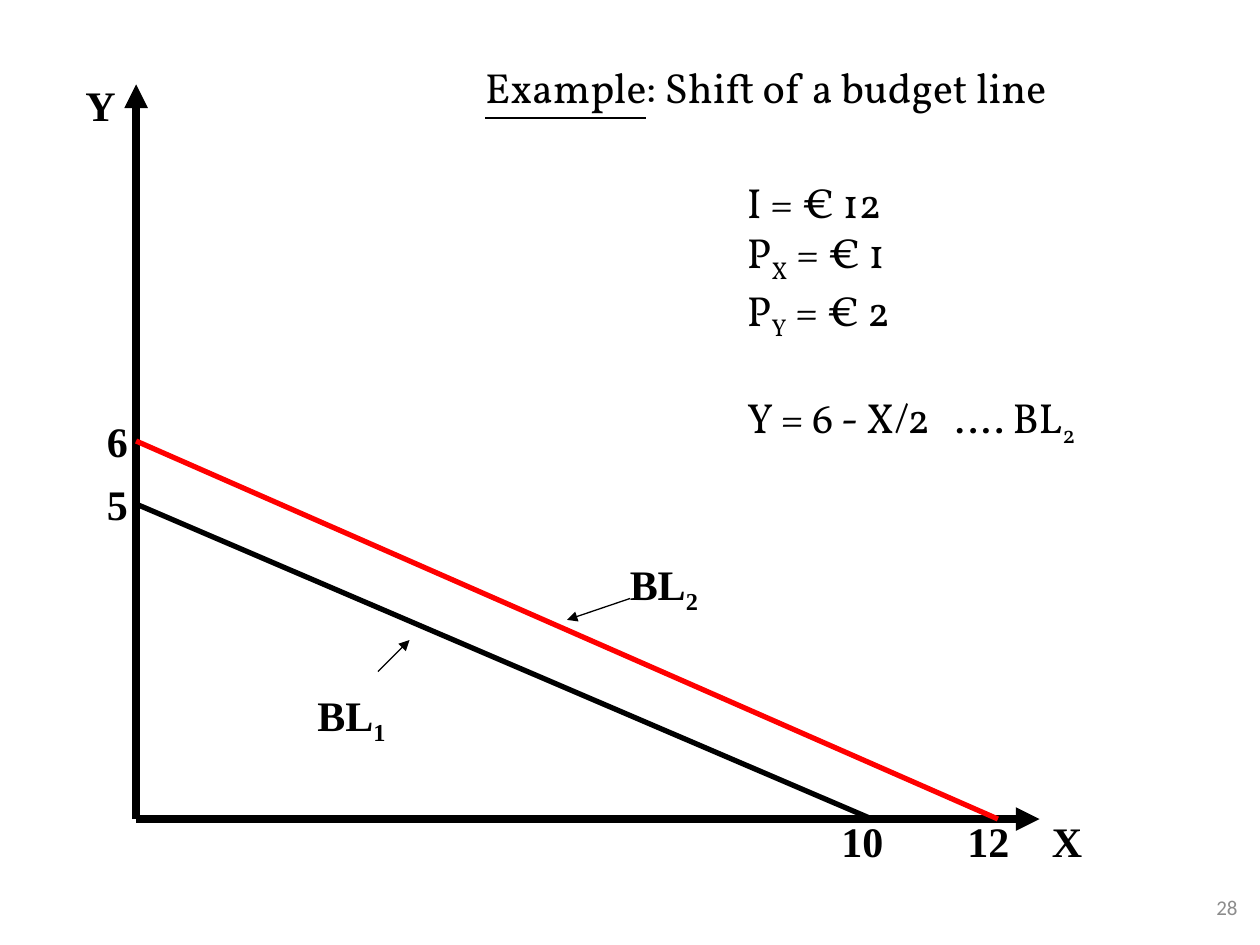
from lxml.etree import SubElement
from pptx import Presentation
from pptx.dml.color import RGBColor
from pptx.enum.shapes import MSO_CONNECTOR
from pptx.enum.text import MSO_ANCHOR, PP_ALIGN
from pptx.oxml.ns import qn
from pptx.util import Inches, Pt

BLACK = RGBColor(0, 0, 0)
RED = RGBColor(255, 0, 0)
GRAY = RGBColor(0x8C, 0x8C, 0x8C)
SERIF, BODY, SANS = "Times New Roman", "Vollkorn", "Calibri"

ORIGIN_X, ORIGIN_Y = 1.08, 6.5
ORIGIN = (ORIGIN_X, ORIGIN_Y)

TITLE = [("Example", "underline"), (": Shift of a budget line", "")]
EQUATIONS = [
    [("I = € 12", "")],
    [("P", ""), ("X", "sub"), (" = € 1", "")],
    [("P", ""), ("Y", "sub"), (" = € 2", "")],
    [("Y = 6 - X/2\t…. BL", ""), ("2", "sub")],
]
LINES = [
    (ORIGIN, (8.25, ORIGIN_Y), BLACK, 4.5, True),
    (ORIGIN, (ORIGIN_X, 0.67), BLACK, 4.5, True),
    ((ORIGIN_X, 4), (6.92, ORIGIN_Y), BLACK, 3, False),
    ((ORIGIN_X, 3.5), (7.92, ORIGIN_Y), RED, 3, False),
    ((3, 5.33), (3.25, 5.08), BLACK, 0.75, True),
    ((5, 4.75), (4.5, 4.92), BLACK, 0.75, True),
]
LABELS = [
    ([("Y", "")], 0.58, 0.58, 0.44),
    ([("X", "")], 8.25, 6.42, 0.44),
    ([("10", "")], 6.58, 6.42, 0.53),
    ([("12", "")], 7.58, 6.42, 0.53),
    ([("5", "")], 0.75, 3.75, 0.37),
    ([("6", "")], 0.75, 3.25, 0.37),
    ([("BL", ""), ("1", "sub")], 2.42, 5.42, 0.76),
    ([("BL", ""), ("2", "sub")], 4.9, 4.38, 0.76),
]


def add_line(slide, start, end, color, width, arrow):
    points = [Inches(v) for v in (*start, *end)]
    sp = slide.shapes.add_connector(MSO_CONNECTOR.STRAIGHT, *points)
    sp.line.color.rgb = color
    sp.line.width = Pt(width)
    if arrow:
        SubElement(sp.line._get_or_add_ln(), qn("a:tailEnd"), type="triangle")
    SubElement(sp._element.spPr, qn("a:effectLst"))


def place(sp, left, top, width, height):
    sp.left, sp.top = Inches(left), Inches(top)
    sp.width, sp.height = Inches(width), Inches(height)


def fill_paragraph(p, runs, font, size=24, color=BLACK, bold=False):
    p.font.name = font
    p.font.size = Pt(size)
    p.font.color.rgb = color
    p.font.bold = bold
    for text, style in runs:
        r = p.add_run()
        r.text = text
        if style == "sub":
            r._r.get_or_add_rPr().set("baseline", "-25000")
        elif style == "underline":
            r.font.underline = True


def add_text(slide, paragraphs, box, font, wrap=False, **style):
    sp = slide.shapes.add_textbox(*[Inches(v) for v in box])
    tf = sp.text_frame
    tf.word_wrap = wrap
    for i, runs in enumerate(paragraphs):
        p = tf.add_paragraph() if i else tf.paragraphs[0]
        if any("\t" in text for text, _ in runs):
            tabs = SubElement(p._p.get_or_add_pPr(), qn("a:tabLst"))
            SubElement(tabs, qn("a:tab"), pos=str(Inches(1.65)), algn="l")
        fill_paragraph(p, runs, font, **style)
    return tf


def main():
    prs = Presentation()
    prs.slide_width, prs.slide_height = Inches(10), Inches(7.5)
    slide = prs.slides.add_slide(prs.slide_layouts[5])

    title = slide.shapes.title
    place(title, 3.75, 0.44, 4.73, 0.5)
    tf = title.text_frame
    tf.word_wrap = False
    tf.vertical_anchor = MSO_ANCHOR.TOP
    tf.paragraphs[0].alignment = PP_ALIGN.LEFT
    fill_paragraph(tf.paragraphs[0], TITLE, BODY)

    for line in LINES:
        add_line(slide, *line)
    for runs, left, top, width in LABELS:
        add_text(slide, [runs], (left, top, width, 0.5), SERIF, bold=True)

    tf = add_text(slide, EQUATIONS, (5.83, 1.35, 3.09, 2.1), BODY, wrap=True)
    tf.paragraphs[-1].space_before = Pt(28.5)

    tf = add_text(slide, [[("28", "")]], (9.17, 7, 0.75, 0.4), SANS,
                  wrap=True, size=12, color=GRAY)
    tf.vertical_anchor = MSO_ANCHOR.MIDDLE
    tf.paragraphs[0].alignment = PP_ALIGN.RIGHT

    prs.save("out.pptx")


if __name__ == "__main__":
    main()
